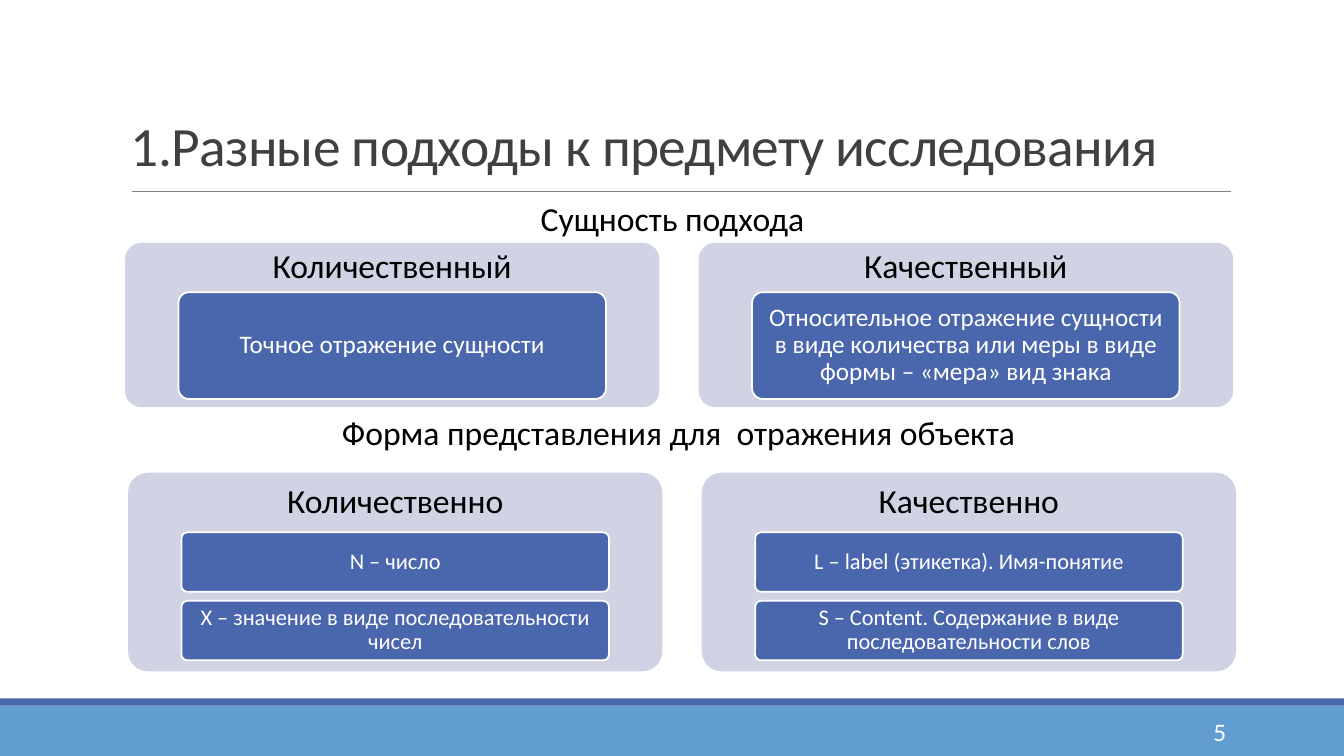
from dataclasses import dataclass

from lxml import etree
from pptx import Presentation
from pptx import util as u
from pptx.dml.color import RGBColor
from pptx.enum import shapes, text
from pptx.oxml.ns import qn


@dataclass(frozen=True)
class Theme:
    font: str = "Calibri"
    accent: str = "4A66AC"
    band: str = "629DD1"
    panel: str = "D0D3E3"
    rule: str = "808080"
    title: str = "404040"
    ink: str = "000000"
    paper: str = "FFFFFF"
    title_size: float = 39.6
    heading_size: float = 24
    large_size: float = 18
    small_size: float = 16


THEME = Theme()
WIDTH, HEIGHT = 13.33, 7.5

# Panel grid: two columns, with cards inset inside each panel
PANEL_WIDTH = 5.3
COLUMN_PITCH = 5.69
CARD_SHARE = 0.8
HEADER_SHARE = 0.3
CORNER = 0.1

APPROACHES = [
    ("Количественный", ["Точное отражение сущности"]),
    ("Качественный", ["Относительное отражение сущности в виде количества "
                      "или меры в виде формы – «мера» вид знака"]),
]
FORMS = [
    ("Количественно", ["N – число",
                       "X – значение в виде последовательности чисел"]),
    ("Качественно", ["L – label (этикетка). Имя-понятие",
                     "S – Content. Содержание в виде последовательности слов"]),
]


def place(left, top, width, height):
    return [u.Inches(value) for value in (left, top, width, height)]


def write(box, wording, size, color, align=text.PP_ALIGN.CENTER, spacing=0.9,
          insets=(0.1, 0.05), anchor=text.MSO_ANCHOR.MIDDLE):
    frame = box.text_frame
    frame.word_wrap = True
    frame.vertical_anchor = anchor
    frame.margin_left = frame.margin_right = u.Inches(insets[0])
    frame.margin_top = frame.margin_bottom = u.Inches(insets[1])
    para = frame.paragraphs[0]
    para.alignment = align
    para.line_spacing = spacing
    para.font.name = THEME.font
    para.font.size = u.Pt(size)
    para.font.color.rgb = RGBColor.from_string(color)
    span = para.add_run()
    span.text = wording
    return span


def add_label(page, area, wording, size, color, **style):
    return write(page.shapes.add_textbox(*place(*area)), wording, size, color, **style)


def add_block(page, area, fill, rounded=False, outline=None):
    kind = shapes.MSO_SHAPE.ROUNDED_RECTANGLE if rounded else shapes.MSO_SHAPE.RECTANGLE
    block = page.shapes.add_shape(kind, *place(*area))
    block.shadow.inherit = False
    block.fill.solid()
    block.fill.fore_color.rgb = RGBColor.from_string(fill)
    if rounded:
        block.adjustments[0] = CORNER
    if outline:
        block.line.color.rgb = RGBColor.from_string(outline)
        block.line.width = u.Pt(1.25)
    else:
        block.line.fill.background()
    return block


def add_rule(page, left, right, y):
    rule = page.shapes.add_connector(shapes.MSO_CONNECTOR.STRAIGHT, u.Inches(left),
                                     u.Inches(y), u.Inches(right), u.Inches(y))
    rule.line.color.rgb = RGBColor.from_string(THEME.rule)
    rule.line.width = u.Pt(0.5)
    etree.SubElement(rule._element.spPr, qn("a:effectLst"))


def add_panel(page, area, heading, cards, card_height, card_pitch, size):
    left, top, width, height = area
    add_block(page, area, THEME.panel, rounded=True)
    header = height * HEADER_SHARE
    add_label(page, (left, top, width, header), heading, THEME.heading_size,
              THEME.ink, insets=(0.1, 0.1))
    card_width = width * CARD_SHARE
    card_left = left + (width - card_width) / 2
    for row, wording in enumerate(cards):
        card_area = (card_left, top + header + row * card_pitch, card_width, card_height)
        card = add_block(page, card_area, THEME.accent, rounded=True, outline=THEME.paper)
        write(card, wording, size, THEME.paper, insets=(0.05, 0.04))


def add_panel_row(page, panels, left, top, height, card_height, card_pitch, size):
    for column, (heading, cards) in enumerate(panels):
        area = (left + column * COLUMN_PITCH, top, PANEL_WIDTH, height)
        add_panel(page, area, heading, cards, card_height, card_pitch, size)


def main():
    deck = Presentation()
    deck.slide_width, deck.slide_height = u.Inches(WIDTH), u.Inches(HEIGHT)
    page = deck.slides.add_slide(deck.slide_layouts[6])

    # Footer bands and page number
    add_block(page, (0, 7, WIDTH, 0.5), THEME.band)
    add_block(page, (0, 6.93, WIDTH, 0.07), THEME.accent)
    add_label(page, (10.83, 7.06, 1.43, 0.4), "5", THEME.large_size, THEME.paper,
              align=text.PP_ALIGN.RIGHT, spacing=1.0)

    # Title and its rule
    title = add_label(page, (1.2, 1.07, 11, 0.83),
                      "1.Разные подходы к предмету исследования",
                      THEME.title_size, THEME.title,
                      align=text.PP_ALIGN.LEFT, spacing=0.85)
    title._r.get_or_add_rPr().set("spc", "-50")
    add_rule(page, 1.31, 12.21, 1.9)

    # Essence of each approach
    add_label(page, (1.17, 1.96, 11, 0.46), "Сущность подхода",
              THEME.heading_size, THEME.ink, anchor=text.MSO_ANCHOR.TOP)
    add_panel_row(page, APPROACHES, left=1.24, top=2.41, height=1.63,
                  card_height=1.06, card_pitch=0, size=THEME.large_size)

    # Forms of representation
    add_label(page, (1.26, 4.04, 10.94, 0.5),
              "Форма представления для  отражения объекта", THEME.heading_size,
              THEME.ink, spacing=1.0, anchor=text.MSO_ANCHOR.TOP)
    add_panel_row(page, FORMS, left=1.27, top=4.69, height=1.97,
                  card_height=0.59, card_pitch=0.68, size=THEME.small_size)

    deck.save("out.pptx")


if __name__ == "__main__":
    main()
